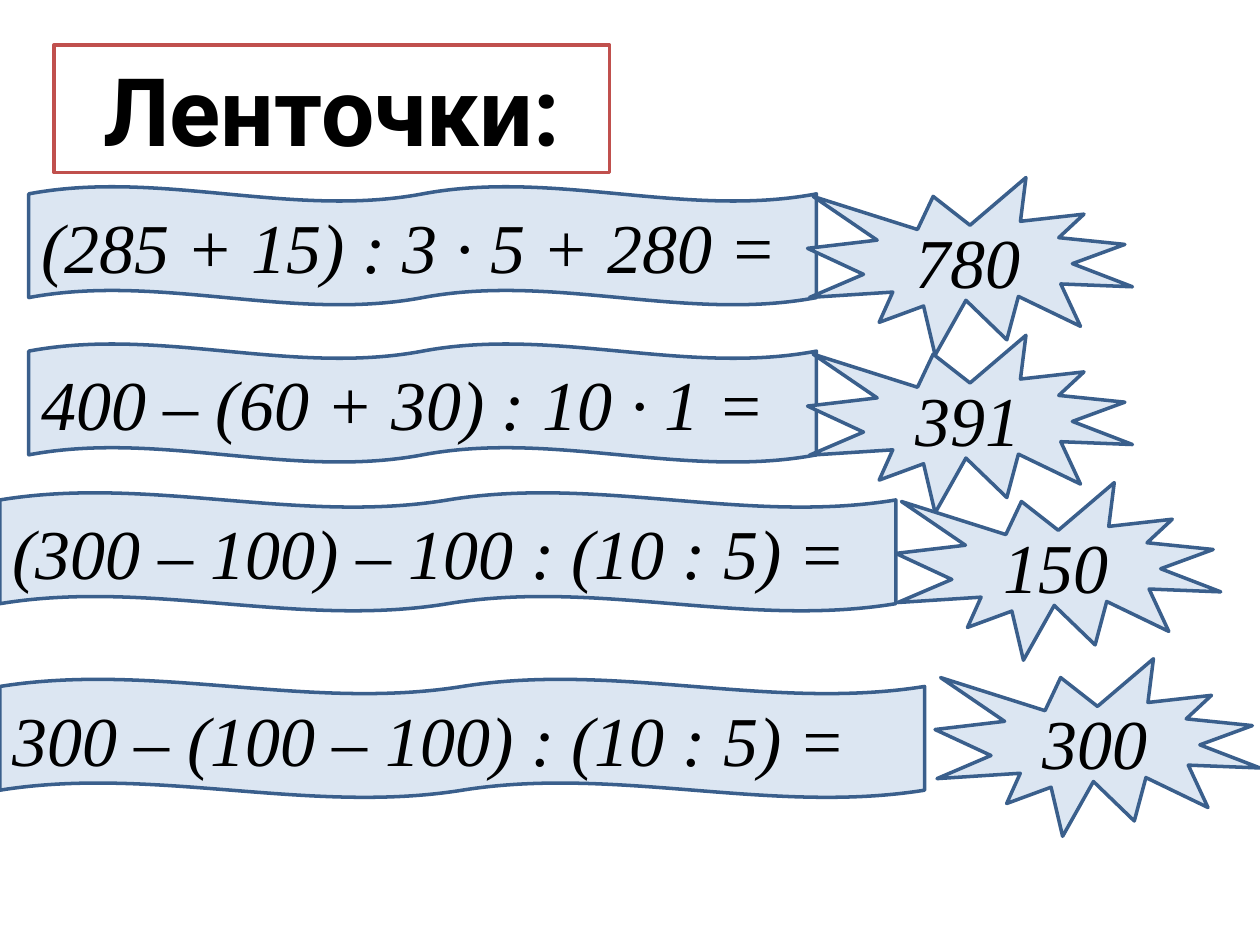
"""Build the slide of sums on ribbons with their answers in stars."""
from pptx import Presentation
from pptx.dml.color import RGBColor
from pptx.enum import shapes, text
from pptx.util import Cm, Pt

BLACK = RGBColor(0x00, 0x00, 0x00)
WHITE = RGBColor(0xFF, 0xFF, 0xFF)
RED = RGBColor(0xC0, 0x50, 0x4D)
PALE = RGBColor(0xDC, 0xE6, 0xF2)
BLUE = RGBColor(0x3A, 0x5F, 0x8C)

KIND = shapes.MSO_SHAPE
SIDE = text.PP_ALIGN
HEAD = {"name": "Roboto", "size": Pt(54), "bold": True}
SUM = {"name": "Times New Roman", "size": Pt(40), "italic": True}

deck = Presentation()
deck.slide_width, deck.slide_height = Cm(25.4), Cm(19.05)
slide = deck.slides.add_slide(deck.slide_layouts[6])


def draw(kind, box, words, font, side=SIDE.CENTER, fill=PALE, line=BLUE):
    shape = slide.shapes.add_shape(kind, *map(Cm, box))
    shape.shadow.inherit = False
    shape.fill.solid()
    shape.fill.fore_color.rgb = fill
    shape.line.color.rgb = line
    shape.line.width = Pt(2)
    frame = shape.text_frame
    frame.word_wrap = True
    frame.vertical_anchor = text.MSO_ANCHOR.MIDDLE
    para = frame.paragraphs[0]
    para.alignment = side
    run = para.add_run()
    run.text = words
    run.font.color.rgb = BLACK
    for key, value in font.items():
        setattr(run.font, key, value)


draw(KIND.RECTANGLE, (1.09, 0.91, 11.2, 2.57), "Ленточки:", HEAD,
     fill=WHITE, line=RED)

rows = [
    ("(285 + 15) : 3 · 5 + 280 =", 0.58, 3.76, 15.88, "780", 16.28, 3.58),
    ("400 – (60 + 30) : 10 · 1 =", 0.58, 6.93, 15.88, "391", 16.28, 6.76),
    ("(300 – 100) – 100 : (10 : 5) =", 0, 9.93, 18.06, "150", 18.06, 9.73),
    ("300 – (100 – 100) : (10 : 5) =", 0, 13.69, 18.64, "300", 18.85, 13.28),
]
for task, left, top, width, answer, star_x, star_y in rows:
    draw(KIND.DOUBLE_WAVE, (left, top, width, 2.39), task, SUM, SIDE.LEFT)
    draw(KIND.EXPLOSION1, (star_x, star_y, 6.55, 3.58), answer, SUM)

deck.save("out.pptx")
